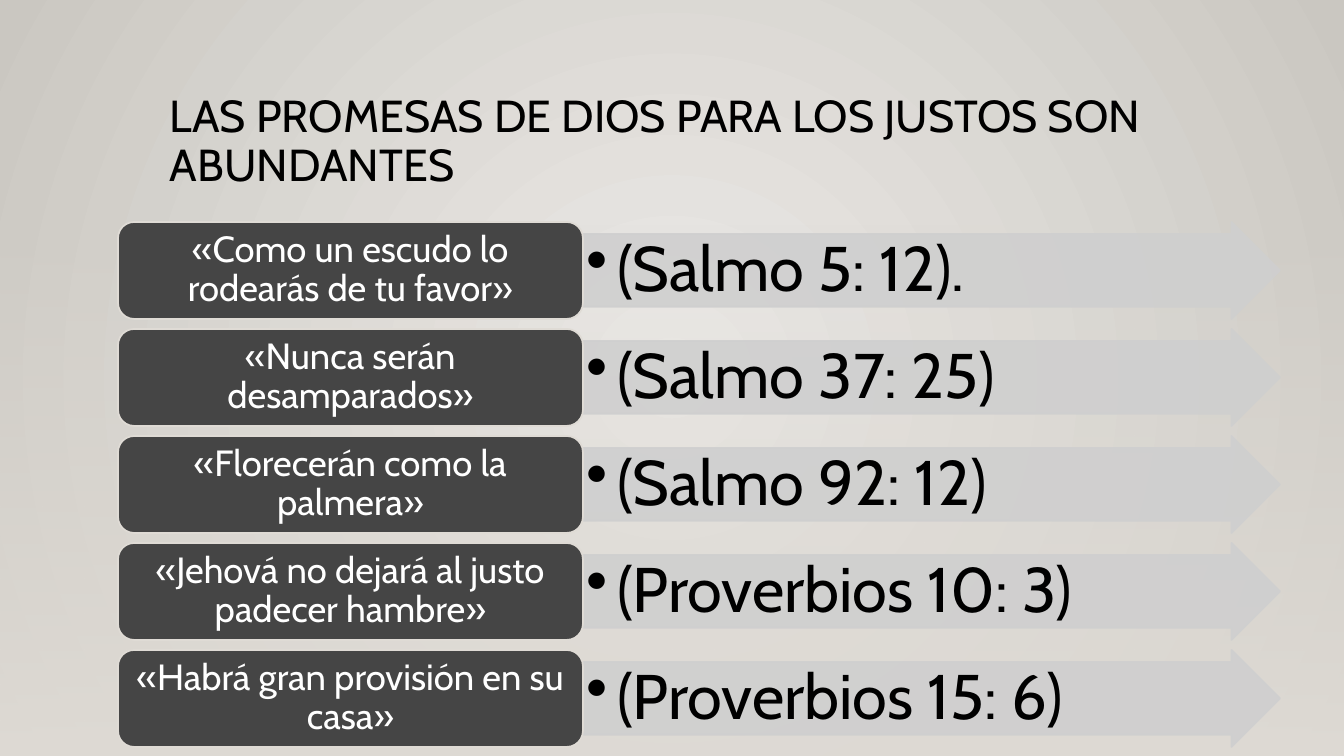
"""Build a slide that pairs promises to the righteous with their Bible verses."""
from lxml import etree
from pptx import Presentation, util as u
from pptx.dml.color import RGBColor
from pptx.enum import shapes, text
from pptx.oxml import ns

PX = 914400 / 100.8
ROW_TOP, ROW_STEP, ROW_H = 222, 107, 97
PILL_X, PILL_W, ARROW_W = 118, 465, 697
PROMISES = [
    ("«Como un escudo lo rodearás de tu favor»", "(Salmo 5: 12)."),
    ("«Nunca serán desamparados»", "(Salmo 37: 25)"),
    ("«Florecerán como la palmera»", "(Salmo 92: 12)"),
    ("«Jehová no dejará al justo padecer hambre»", "(Proverbios 10: 3)"),
    ("«Habrá gran provisión en su casa»", "(Proverbios 15: 6)"),
]


def px(n):
    return u.Emu(round(n * PX))


def rgb(value):
    return RGBColor.from_string(value)


prs = Presentation()
prs.slide_width, prs.slide_height = px(1344), px(756)
s = prs.slides.add_slide(prs.slide_layouts[6])

fill = s.background.fill
fill.gradient()
for stop, color in zip(fill.gradient_stops, ("ECEAE7", "CAC7C1")):
    stop.color.rgb = rgb(color)
grad = s.element.find(".//" + ns.qn("a:gradFill"))
grad.remove(grad.find(ns.qn("a:lin")))
circle = etree.SubElement(grad, ns.qn("a:path"), path="circle")
etree.SubElement(circle, ns.qn("a:fillToRect"), l="50000", t="50000", r="50000", b="50000")

floor = s.shapes.add_shape(shapes.MSO_SHAPE.RECTANGLE, px(0), px(223), px(1344), px(533))
floor.shadow.inherit = False
floor.line.fill.background()
floor.fill.gradient()
floor.fill.gradient_angle = 270
for stop in floor.fill.gradient_stops:
    stop.color.rgb = rgb("DFDBD5")
first = floor.element.find(".//" + ns.qn("a:srgbClr"))
etree.SubElement(first, ns.qn("a:alpha"), val="0")

title = s.shapes.add_textbox(px(160), px(89), px(1058), px(116))
title.text_frame.word_wrap = True
p = title.text_frame.paragraphs[0]
p.line_spacing = 0.9
r = p.add_run()
r.text = "LAS PROMESAS DE DIOS PARA LOS JUSTOS SON ABUNDANTES"
r.font.name, r.font.size, r.font.color.rgb = "Cabin", u.Pt(32), rgb("000000")

ARROW = {"kind": shapes.MSO_SHAPE.RIGHT_ARROW, "x": PILL_X + PILL_W, "w": ARROW_W,
         "fill": "CFCFCF", "line": "CFCFCF", "adj": (0.75, 0.5), "insets": (3, 3),
         "anchor": text.MSO_ANCHOR.TOP, "align": text.PP_ALIGN.LEFT,
         "size": 45, "color": "000000"}
PILL = {"kind": shapes.MSO_SHAPE.ROUNDED_RECTANGLE, "x": PILL_X, "w": PILL_W,
        "fill": "454545", "line": "DFDBD5", "adj": (0.16667,), "insets": (11, 5),
        "anchor": text.MSO_ANCHOR.MIDDLE, "align": text.PP_ALIGN.CENTER,
        "size": 26, "color": "FFFFFF"}

for row, (promise, verse) in enumerate(PROMISES):
    for look, words in ((ARROW, verse), (PILL, promise)):
        sp = s.shapes.add_shape(look["kind"], px(look["x"]), px(ROW_TOP + row * ROW_STEP),
                                px(look["w"]), px(ROW_H))
        sp.shadow.inherit = False
        for i, value in enumerate(look["adj"]):
            sp.adjustments[i] = value
        sp.fill.solid()
        sp.fill.fore_color.rgb = rgb(look["fill"])
        sp.line.color.rgb = rgb(look["line"])
        sp.line.width = u.Pt(1.25)
        tf = sp.text_frame
        side, edge = look["insets"]
        for name, value in {"margin_left": px(side), "margin_right": px(side),
                            "margin_top": px(edge), "margin_bottom": px(edge),
                            "vertical_anchor": look["anchor"], "word_wrap": True}.items():
            setattr(tf, name, value)
        p = tf.paragraphs[0]
        p.alignment, p.line_spacing = look["align"], 0.9
        if look is ARROW:
            for color in sp.element.spPr.iter(ns.qn("a:srgbClr")):
                etree.SubElement(color, ns.qn("a:alpha"), val="90000")
            pPr = p._p.get_or_add_pPr()
            pPr.set("marL", str(px(31)))
            pPr.set("indent", str(-px(31)))
            etree.SubElement(pPr, ns.qn("a:buChar"), char="•")
        r = p.add_run()
        r.text = words
        r.font.name, r.font.size = "Cabin", u.Pt(look["size"])
        r.font.color.rgb = rgb(look["color"])

prs.save("out.pptx")
